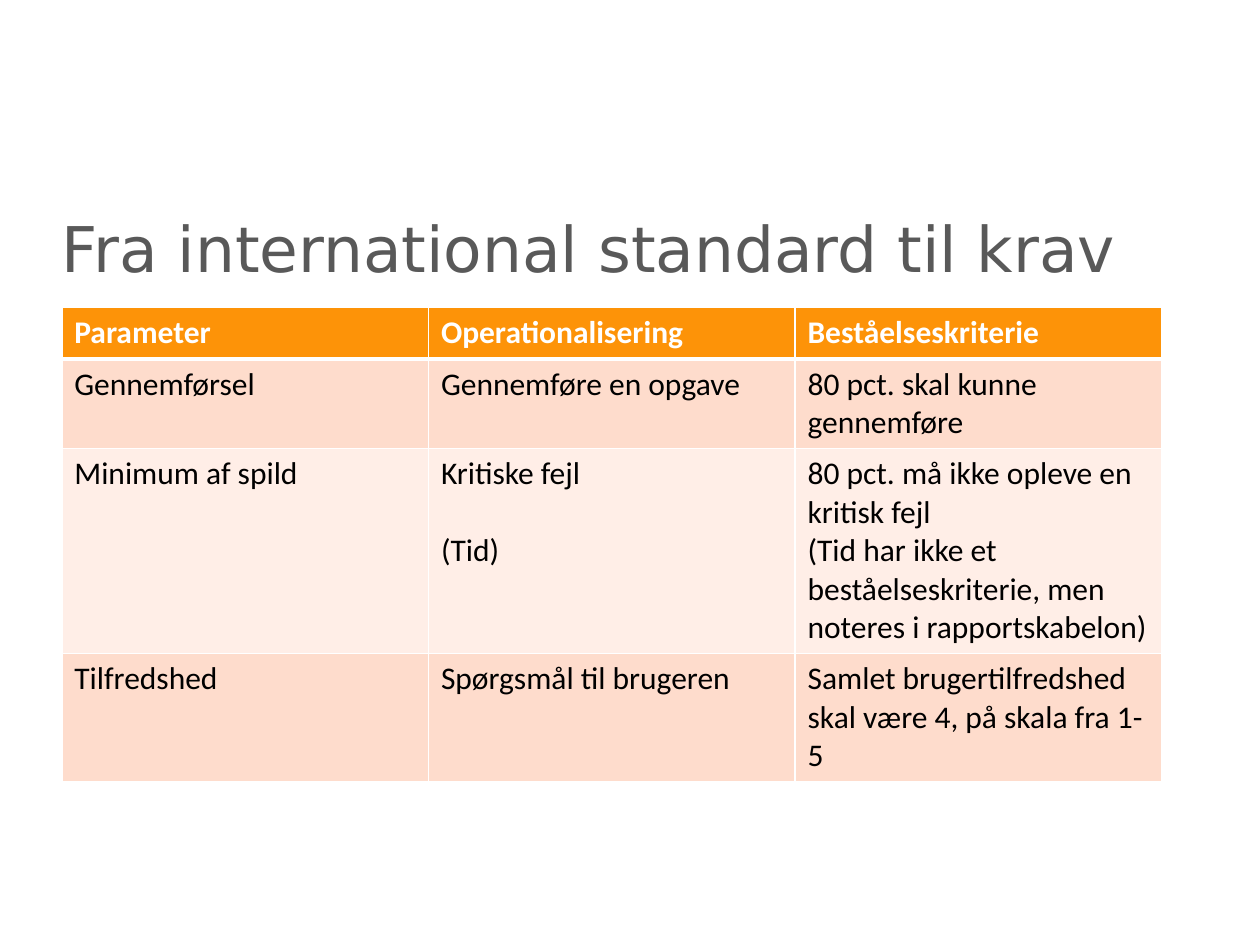
from dataclasses import dataclass

from lxml import etree
from pptx import Presentation
from pptx.dml.color import RGBColor
from pptx.enum.text import MSO_ANCHOR, PP_ALIGN
from pptx.oxml.ns import qn
from pptx.util import Inches, Pt

TOP = MSO_ANCHOR.TOP
LEFT = PP_ALIGN.LEFT
TITLE_ONLY = 5


@dataclass(frozen=True)
class Theme:
    title_font: str = "DejaVu Sans"
    body_font: str = "Calibri"
    title_size: int = 36
    body_size: int = 18
    title: str = "595959"
    text: str = "000000"
    white: str = "FFFFFF"
    header: str = "FD9308"
    bands: tuple[str, str] = ("FEDCCC", "FFEEE7")
    thin: int = 1
    thick: int = 3


@dataclass(frozen=True)
class Requirement:
    parameter: str
    measure: str
    criterion: str
    measure_gap: int = 0

    def texts(self) -> tuple[str, str, str]:
        return self.parameter, self.measure, self.criterion


THEME = Theme()
COLUMN_WIDTH = 2.91
ROW_HEIGHT = 0.41
ROWS = [
    Requirement("Parameter", "Operationalisering", "Beståelseskriterie"),
    Requirement("Gennemførsel", "Gennemføre en opgave", "80 pct. skal kunne gennemføre"),
    Requirement(
        "Minimum af spild",
        "Kritiske fejl\n(Tid)",
        "80 pct. må ikke opleve en kritisk fejl\n"
        "(Tid har ikke et beståelseskriterie, men noteres i rapportskabelon)",
        measure_gap=22,
    ),
    Requirement(
        "Tilfredshed",
        "Spørgsmål til brugeren",
        "Samlet brugertilfredshed skal være 4, på skala fra 1-5",
    ),
]


def style_font(font, name: str, size: int, color: str, bold: bool = False) -> None:
    font.name = name
    font.size = Pt(size)
    font.bold = bold
    font.color.rgb = RGBColor.from_string(color)


def add_borders(cell, top: int, bottom: int) -> None:
    tc_pr = cell._tc.get_or_add_tcPr()
    widths = {"a:lnL": THEME.thin, "a:lnR": THEME.thin, "a:lnT": top, "a:lnB": bottom}
    for tag, width in widths.items():
        ln = etree.SubElement(tc_pr, qn(tag), w=str(Pt(width)))
        fill = etree.SubElement(ln, qn("a:solidFill"))
        etree.SubElement(fill, qn("a:srgbClr"), val=THEME.white)


def fill_cell(cell, text: str, row: int, gap: int) -> None:
    is_header = row == 0
    add_borders(
        cell,
        THEME.thick if row == 1 else THEME.thin,
        THEME.thick if is_header else THEME.thin,
    )
    cell.fill.solid()
    fill = THEME.header if is_header else THEME.bands[(row - 1) % 2]
    cell.fill.fore_color.rgb = RGBColor.from_string(fill)
    cell.text_frame.text = text
    for i, p in enumerate(cell.text_frame.paragraphs):
        if i and gap:
            p.space_before = Pt(gap)
        for r in p.runs:
            color = THEME.white if is_header else THEME.text
            style_font(r.font, THEME.body_font, THEME.body_size, color, is_header)


def add_title(slide, text: str) -> None:
    s = slide.shapes.title
    s.left, s.top, s.width, s.height = map(Inches, (0.43, 1.56, 9, 1.66))
    tf = s.text_frame
    tf.text = text
    tf.word_wrap = True
    tf.vertical_anchor = TOP
    tf.margin_left = Inches(0.06)
    tf.margin_top = Inches(0.1)
    p = tf.paragraphs[0]
    p.alignment = LEFT
    style_font(p.runs[0].font, THEME.title_font, THEME.title_size, THEME.title)


def add_requirements(slide, rows: list[Requirement]) -> None:
    columns = len(rows[0].texts())
    s = slide.shapes.add_table(
        len(rows), columns, Inches(0.49), Inches(2.44),
        Inches(COLUMN_WIDTH * columns), Inches(ROW_HEIGHT * len(rows)),
    )
    for i, row in enumerate(rows):
        for j, text in enumerate(row.texts()):
            fill_cell(s.table.cell(i, j), text, i, row.measure_gap if j == 1 else 0)
    s.height = Inches(3.71)


def main() -> None:
    prs = Presentation()
    prs.slide_width = Inches(10)
    prs.slide_height = Inches(7.5)
    slide = prs.slides.add_slide(prs.slide_layouts[TITLE_ONLY])
    add_title(slide, "Fra international standard til krav")
    add_requirements(slide, ROWS)
    prs.save("out.pptx")


if __name__ == "__main__":
    main()
